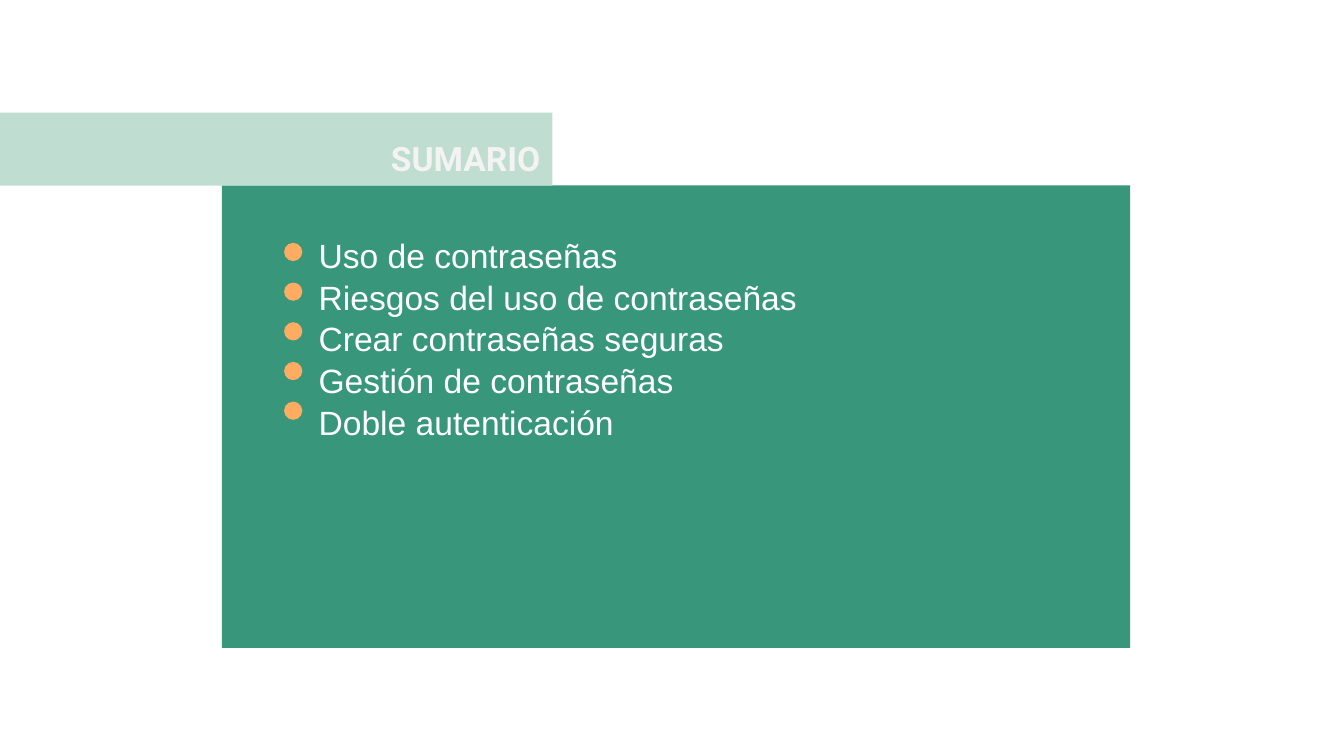
from dataclasses import dataclass

from pptx import Presentation
from pptx import util as u
from pptx.dml.color import RGBColor
from pptx.enum import shapes, text


@dataclass(frozen=True)
class Theme:
    panel: str = "38967B"
    band: str = "BFDDD1"
    dot: str = "FFAB61"
    heading: str = "F3F3F3"
    body: str = "FFFFFF"
    heading_font: str = "Roboto"
    body_font: str = "Arial"
    size: int = 24


def write(paragraph, words, *, font, size, color, bold=False,
          align=text.PP_ALIGN.LEFT, spacing=1.0):
    """Put words in a paragraph and format it."""
    paragraph.text = words
    paragraph.alignment = align
    paragraph.line_spacing = spacing
    paragraph.space_before = paragraph.space_after = u.Pt(0)
    paragraph.font.name = font
    paragraph.font.size = u.Pt(size)
    paragraph.font.bold = bold
    paragraph.font.color.rgb = RGBColor.from_string(color)


class SlideBuilder:
    def __init__(self, slide, theme):
        self.slide = slide
        self.theme = theme

    def block(self, kind, box, color):
        shape = self.slide.shapes.add_shape(kind, *map(u.Cm, box))
        shape.shadow.inherit = False
        shape.fill.solid()
        shape.fill.fore_color.rgb = RGBColor.from_string(color)
        shape.line.fill.background()

    def frame(self, shape, anchor, right=0, bottom=0):
        frame = shape.text_frame
        frame.word_wrap = True
        frame.auto_size = text.MSO_AUTO_SIZE.NONE
        frame.vertical_anchor = anchor
        frame.margin_left = frame.margin_top = 0
        frame.margin_right, frame.margin_bottom = u.Cm(right), u.Cm(bottom)
        return frame

    def title(self, words, box):
        shape = self.slide.shapes.title
        shape.left, shape.top, shape.width, shape.height = map(u.Cm, box)
        # Bring the title in front of its band
        self.slide.shapes._spTree.append(shape._element)
        frame = self.frame(shape, text.MSO_ANCHOR.BOTTOM, right=0.3, bottom=0.2)
        write(frame.paragraphs[0], words, font=self.theme.heading_font,
              size=self.theme.size, color=self.theme.heading, bold=True,
              align=text.PP_ALIGN.RIGHT)

    def topics(self, lines, box):
        shape = self.slide.shapes.add_textbox(*map(u.Cm, box))
        frame = self.frame(shape, text.MSO_ANCHOR.TOP)
        for index, line in enumerate(lines):
            paragraph = frame.add_paragraph() if index else frame.paragraphs[0]
            write(paragraph, line, font=self.theme.body_font,
                  size=self.theme.size, color=self.theme.body, spacing=1.04)

    def dots(self, count, left, top, size, pitch):
        for index in range(count):
            self.block(shapes.MSO_SHAPE.OVAL,
                       (left, top + index * pitch, size, size), self.theme.dot)


def main():
    presentation = Presentation()
    presentation.slide_width = u.Cm(33.87)
    presentation.slide_height = u.Cm(19.05)
    theme = Theme()
    # Layout 5 is the title-only layout
    slide = presentation.slides.add_slide(presentation.slide_layouts[5])
    builder = SlideBuilder(slide, theme)

    # Panel and heading band
    band = (0, 2.84, 13.92, 1.84)
    rectangle = shapes.MSO_SHAPE.RECTANGLE
    builder.block(rectangle, (5.59, 4.67, 22.89, 11.66), theme.panel)
    builder.block(rectangle, band, theme.band)
    builder.title("SUMARIO", band)

    # Topics with their dots
    topics = [
        "Uso de contraseñas",
        "Riesgos del uso de contraseñas",
        "Crear contraseñas seguras",
        "Gestión de contraseñas",
        "Doble autenticación",
    ]
    builder.topics(topics, (8.03, 5.87, 18.6, 5.2))
    builder.dots(len(topics), left=7.16, top=6.12, size=0.46, pitch=1.0)

    presentation.save("out.pptx")


if __name__ == "__main__":
    main()
